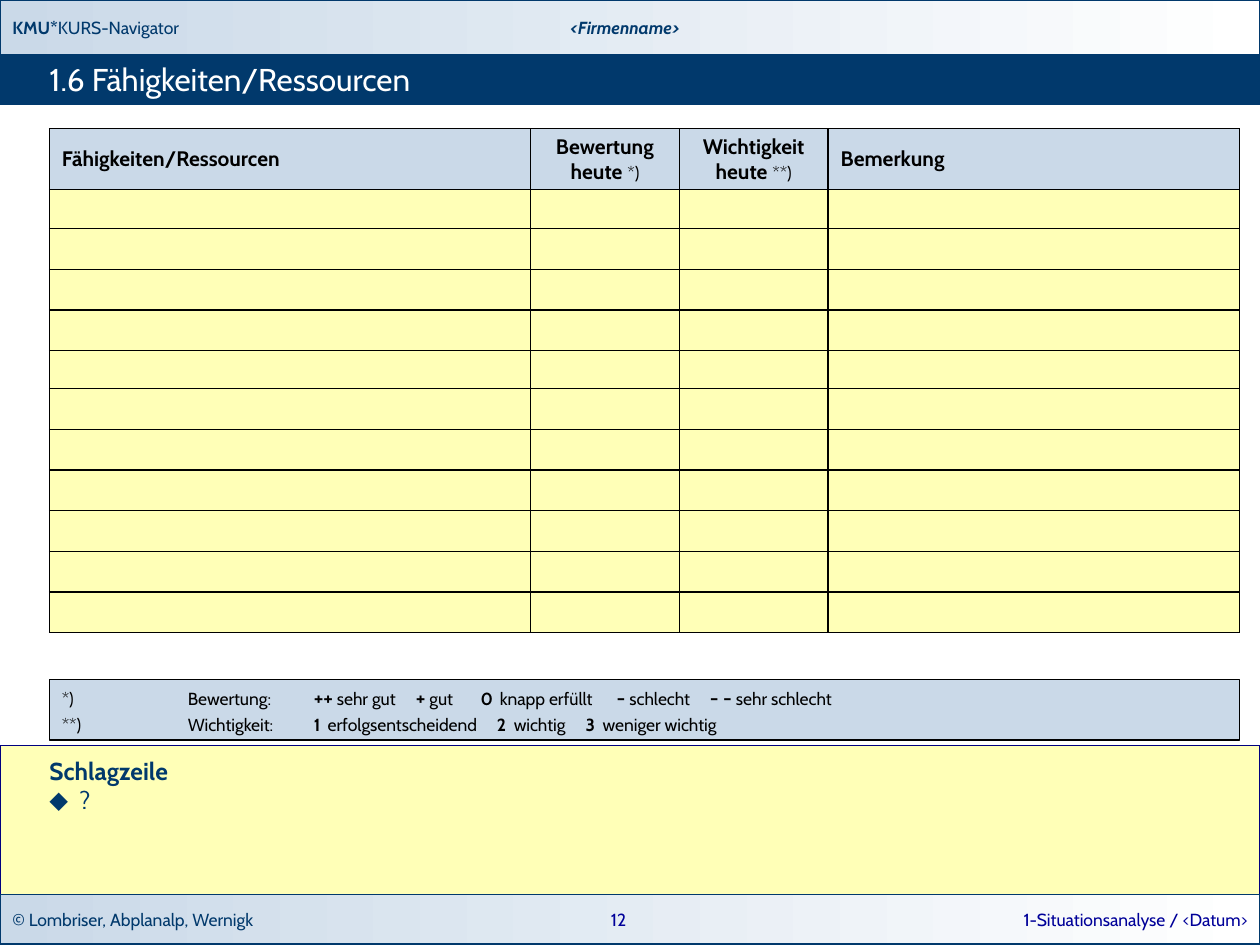
from dataclasses import dataclass
from typing import Optional

import pptx
import pptx.dml.color
import pptx.enum.shapes
import pptx.enum.text
import pptx.oxml.ns
import pptx.util
from lxml import etree

Pt = pptx.util.Pt
RGBColor = pptx.dml.color.RGBColor
Align = pptx.enum.text.PP_ALIGN
Anchor = pptx.enum.text.MSO_ANCHOR
qn = pptx.oxml.ns.qn

NAVY = RGBColor(0x01, 0x39, 0x6C)
INK_BLUE = RGBColor(0x00, 0x00, 0x99)
FRAME_BLUE = RGBColor(0x00, 0x00, 0x80)
PALE_BLUE = RGBColor(0xCA, 0xD9, 0xE8)
YELLOW = RGBColor(0xFF, 0xFF, 0xB7)
WHITE = RGBColor(0xFF, 0xFF, 0xFF)
BLACK = RGBColor(0, 0, 0)

FONT = "Cabin"
LINE_WIDTH = 0.75
MARGIN_LEFT = 28.2
CONTENT_WIDTH = 680
COLUMN_WIDTHS = (275, 85, 85, 235)
ROW_HEIGHTS = (34.8, 22.3, 23.25, 23.25, 23.25, 21.7) + (23.25,) * 6


@dataclass(frozen=True)
class Box:
    left: float
    top: float
    width: float
    height: float


@dataclass(frozen=True)
class Run:
    text: str
    size: float = 10
    color: RGBColor = BLACK
    bold: bool = False
    italic: bool = False


@dataclass(frozen=True)
class Label:
    box: Box
    runs: tuple[Run, ...]
    alignment: Align = Align.LEFT


@dataclass(frozen=True)
class LegendLine:
    tabs: tuple[float, ...]
    runs: tuple[Run, ...]


HEADERS = (
    (Align.LEFT, (Run("Fähigkeiten/Ressourcen", 12, bold=True),)),
    (Align.CENTER, (Run("Bewertung heute ", 12, bold=True), Run("*)"))),
    (Align.CENTER, (Run("Wichtigkeit heute ", 12, bold=True), Run("**)"))),
    (Align.LEFT, (Run("Bemerkung", 12, bold=True),)),
)

HEADER_BAND = Box(0, 0, 720, 31)
TITLE_BAND = Box(0, 31, 720, 28.4)
FOOTER_BAND = Box(0, 511.2, 720, 28.2)

LABELS = (
    Label(Box(0, 0, 220, 31), (Run("KMU*", 10, NAVY, True), Run("KURS-Navigator", 10, NAVY))),
    Label(Box(229.7, 0, 254.9, 31.7), (Run("<Firmenname>", 10, NAVY, True, True),), Align.CENTER),
    Label(Box(0, 511.2, 260, 28.2), (Run("© Lombriser, Abplanalp, Wernigk", 10, NAVY),)),
    Label(Box(336.2, 511.2, 34.6, 28.2), (Run("12", 10, INK_BLUE),), Align.CENTER),
    Label(Box(491.8, 511.2, 228.2, 28.8), (Run("1-Situationsanalyse / <Datum>", 10, INK_BLUE),), Align.RIGHT),
)

LEGEND = (
    LegendLine(
        (72, 144, 202.3, 239.4, 250.3, 317.1, 370.3),
        (
            Run("*)\tBewertung:\t"), Run("++", 12, bold=True), Run(" sehr gut\t"),
            Run("+", 12, bold=True), Run(" gut\t"), Run("0", bold=True),
            Run("\tknapp erfüllt\t"), Run("-", 12, bold=True), Run(" schlecht\t"),
            Run("- -", 12, bold=True), Run(" sehr schlecht"),
        ),
    ),
    LegendLine(
        (72, 144, 152, 248.6, 258.3, 299.4, 309.1),
        (
            Run("**)\tWichtigkeit:\t"), Run("1", bold=True), Run("\terfolgsentscheidend\t"),
            Run("2", bold=True), Run("\twichtig\t"), Run("3", bold=True), Run("\tweniger wichtig"),
        ),
    ),
)


def place(shape, box: Box) -> None:
    shape.left, shape.top = Pt(box.left), Pt(box.top)
    shape.width, shape.height = Pt(box.width), Pt(box.height)


def set_margins(target, left: float, top: float, right: float, bottom: float) -> None:
    target.margin_left, target.margin_top = Pt(left), Pt(top)
    target.margin_right, target.margin_bottom = Pt(right), Pt(bottom)


def write_runs(paragraph, runs: tuple[Run, ...], alignment: Align = Align.LEFT) -> None:
    paragraph.alignment = alignment
    for item in runs:
        run = paragraph.add_run()
        run.text = item.text
        run.font.name = FONT
        run.font.size = Pt(item.size)
        run.font.bold = item.bold
        run.font.italic = item.italic
        run.font.color.rgb = item.color


def style_surface(shape, line: RGBColor, fill: Optional[RGBColor] = None) -> None:
    shape.line.color.rgb = line
    shape.line.width = Pt(LINE_WIDTH)
    if fill is not None:
        shape.fill.solid()
        shape.fill.fore_color.rgb = fill
        return
    shape.fill.gradient()
    shape.fill.gradient_angle = 0
    for stop, color, position in zip(shape.fill.gradient_stops, (PALE_BLUE, WHITE), (0, 1)):
        stop.color.rgb = color
        stop.position = position


def add_rectangle(slide, box: Box, line: RGBColor, fill: Optional[RGBColor] = None):
    shape = slide.shapes.add_shape(
        pptx.enum.shapes.MSO_SHAPE.RECTANGLE, Pt(box.left), Pt(box.top), Pt(box.width), Pt(box.height))
    shape.shadow.inherit = False
    style_surface(shape, line, fill)
    return shape


def add_label(slide, label: Label) -> None:
    box = label.box
    frame = slide.shapes.add_textbox(Pt(box.left), Pt(box.top), Pt(box.width), Pt(box.height)).text_frame
    frame.word_wrap = True
    frame.vertical_anchor = Anchor.MIDDLE
    write_runs(frame.paragraphs[0], label.runs, label.alignment)


def set_cell_borders(cell) -> None:
    properties = cell._tc.get_or_add_tcPr()
    for index, side in enumerate(("a:lnL", "a:lnR", "a:lnT", "a:lnB")):
        border = etree.Element(qn(side), w=str(Pt(LINE_WIDTH)))
        fill = etree.SubElement(border, qn("a:solidFill"))
        etree.SubElement(fill, qn("a:srgbClr"), val=str(BLACK))
        properties.insert(index, border)


def add_rating_table(slide) -> None:
    table = slide.shapes.add_table(
        len(ROW_HEIGHTS), len(COLUMN_WIDTHS), Pt(MARGIN_LEFT), Pt(73.6),
        Pt(CONTENT_WIDTH), Pt(sum(ROW_HEIGHTS))).table
    table.first_row = table.horz_banding = False
    for column, width in zip(table.columns, COLUMN_WIDTHS):
        column.width = Pt(width)
    for row_index, (row, height) in enumerate(zip(table.rows, ROW_HEIGHTS)):
        row.height = Pt(height)
        for cell, (alignment, runs) in zip(row.cells, HEADERS):
            set_margins(cell, 7.2, 2.8, 7.2, 2.8)
            cell.vertical_anchor = Anchor.MIDDLE
            cell.fill.solid()
            cell.fill.fore_color.rgb = YELLOW if row_index else PALE_BLUE
            set_cell_borders(cell)
            paragraph = cell.text_frame.paragraphs[0]
            if row_index:
                etree.SubElement(paragraph._p, qn("a:endParaRPr"), sz="1000")
            else:
                write_runs(paragraph, runs, alignment)


def add_legend(slide) -> None:
    shape = add_rectangle(slide, Box(MARGIN_LEFT, 388.3, CONTENT_WIDTH, 34.7), BLACK, PALE_BLUE)
    frame = shape.text_frame
    frame.word_wrap = True
    frame.vertical_anchor = Anchor.MIDDLE
    set_margins(frame, 7.2, 2.8, 7.2, 2.8)
    for index, line in enumerate(LEGEND):
        paragraph = frame.add_paragraph() if index else frame.paragraphs[0]
        tab_list = etree.SubElement(paragraph._p.get_or_add_pPr(), qn("a:tabLst"))
        for position in line.tabs:
            etree.SubElement(tab_list, qn("a:tab"), pos=str(Pt(position)), algn="l")
        paragraph.space_before = Pt(2 if index else 0)
        write_runs(paragraph, line.runs)


def fill_title(slide) -> None:
    title = slide.shapes.title
    title.element.addprevious(add_rectangle(slide, TITLE_BAND, NAVY, NAVY).element)
    place(title, Box(MARGIN_LEFT, TITLE_BAND.top, 668.9, TITLE_BAND.height))
    frame = title.text_frame
    frame.auto_size = pptx.enum.text.MSO_AUTO_SIZE.NONE
    frame.vertical_anchor = Anchor.MIDDLE
    set_margins(frame, 0, 0, 0, 0)
    write_runs(frame.paragraphs[0], (Run("1.6 Fähigkeiten/Ressourcen", 18, WHITE),))


def fill_headline(slide) -> None:
    body = slide.placeholders[1]
    place(body, Box(0, 426, 720, 85.2))
    style_surface(body, FRAME_BLUE, YELLOW)
    frame = body.text_frame
    frame.auto_size = pptx.enum.text.MSO_AUTO_SIZE.NONE
    frame.vertical_anchor = Anchor.TOP
    set_margins(frame, MARGIN_LEFT, 5.8, 14.4, 5.8)
    heading, bullet = frame.paragraphs[0], frame.add_paragraph()
    for paragraph, indent in ((heading, 0), (bullet, 17.3)):
        properties = paragraph._p.get_or_add_pPr()
        properties.set("marL", str(Pt(indent)))
        properties.set("indent", str(Pt(-indent)))
        if indent:
            etree.SubElement(properties, qn("a:buSzPct"), val="110000")
            etree.SubElement(properties, qn("a:buChar"), char="⬥")
        else:
            etree.SubElement(properties, qn("a:buNone"))
        paragraph.space_before = Pt(0)
    write_runs(heading, (Run("Schlagzeile", 14, NAVY, True),))
    write_runs(bullet, (Run("?", 14, NAVY),))


def main() -> None:
    presentation = pptx.Presentation()
    presentation.slide_width, presentation.slide_height = Pt(720), Pt(540)
    slide = presentation.slides.add_slide(presentation.slide_layouts[1])
    for band in (FOOTER_BAND, HEADER_BAND):
        add_rectangle(slide, band, NAVY)
    fill_title(slide)
    for label in LABELS:
        add_label(slide, label)
    add_rating_table(slide)
    fill_headline(slide)
    add_legend(slide)
    presentation.save("out.pptx")


if __name__ == "__main__":
    main()
